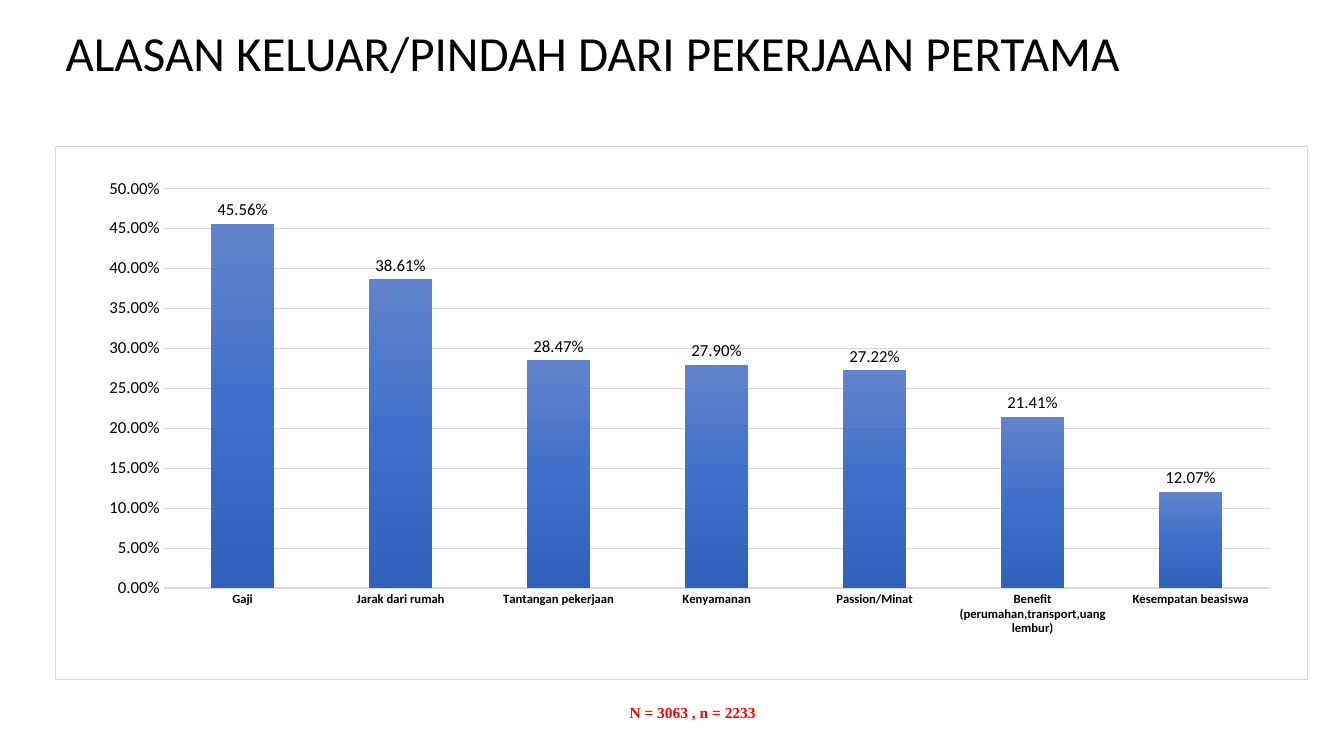
"""Build the slide on reasons for leaving the first job."""
from lxml import etree
from pptx import Presentation
from pptx import util as u
from pptx.chart.data import CategoryChartData
from pptx.dml.color import RGBColor
from pptx.enum import chart as ch, text
from pptx.oxml import parse_xml
from pptx.oxml.ns import nsdecls, qn

WIDE, HIGH = 13.33, 7.5
TITLE = "ALASAN KELUAR/PINDAH DARI PEKERJAAN PERTAMA"
NOTE = "N = 3063 , n = 2233"
REASONS = {
    "Gaji": 0.4556,
    "Jarak dari rumah": 0.3861,
    "Tantangan pekerjaan": 0.2847,
    "Kenyamanan": 0.279,
    "Passion/Minat": 0.2722,
    "Benefit (perumahan,transport,uang lembur)": 0.2141,
    "Kesempatan beasiswa": 0.1207,
}
INK = {"text": "000000", "note": "FF0000", "rule": "D9D9D9"}
STOPS = {0: "6183CB", 50: "3E70CA", 100: "3062BB"}
PLOT = {"x": 0.086, "y": 0.078, "w": 0.884, "h": 0.75}
LEFT, SPAN = 0.55, 12.42
BOXES = {
    "title": (LEFT, 0.1, SPAN, 0.9),
    "chart": (LEFT, 1.45, SPAN, 5.3),
    "note": (6.07, 6.94, 1.6, 0.33),
}
PERCENT = "0.00%"


def place(name):
    return [u.Inches(n) for n in BOXES[name]]


def style(font, size, face="Calibri", ink="text", bold=False):
    font.size, font.name, font.bold = u.Pt(size), face, bold
    font.color.rgb = RGBColor.from_string(INK[ink])


def rule(line, width):
    line.color.rgb = RGBColor.from_string(INK["rule"])
    line.width = u.Pt(width)


def add_title(slide):
    box = slide.shapes.title
    box.left, box.top, box.width, box.height = place("title")
    frame = box.text_frame
    frame.word_wrap = True
    frame.auto_size = text.MSO_AUTO_SIZE.NONE
    frame.vertical_anchor = text.MSO_ANCHOR.MIDDLE
    para = frame.paragraphs[0]
    para.alignment, para.line_spacing = text.PP_ALIGN.LEFT, 0.9
    run = para.add_run()
    run.text = TITLE
    style(run.font, 35)


def shade(fill):
    fill.gradient()
    fill.gradient_angle = 270
    grad = fill.gradient_stops[0]._gs.getparent()
    for stop in list(grad):
        grad.remove(stop)
    for pos, ink in STOPS.items():
        stop = etree.SubElement(grad, qn("a:gs"), pos=str(pos * 1000))
        etree.SubElement(stop, qn("a:srgbClr"), val=ink)


def frame_chart(chart):
    space = chart._chartSpace
    border = parse_xml(
        f'<c:spPr {nsdecls("c", "a")}><a:noFill/><a:ln w="{u.Pt(0.75)}"><a:solidFill>'
        f'<a:srgbClr val="{INK["rule"]}"/></a:solidFill></a:ln></c:spPr>')
    space.find(qn("c:txPr")).addprevious(border)
    plot = space.chart.plotArea
    for old in plot.findall(qn("c:layout")):
        plot.remove(old)
    modes = "".join(f'<c:{k}Mode val="edge"/>' for k in "xy")
    sides = "".join(f'<c:{k} val="{v}"/>' for k, v in PLOT.items())
    plot.insert(0, parse_xml(
        f'<c:layout {nsdecls("c")}><c:manualLayout><c:layoutTarget val="inner"/>'
        f'{modes}{sides}</c:manualLayout></c:layout>'))


def add_chart(slide):
    data = CategoryChartData(number_format=PERCENT)
    data.categories = list(REASONS)
    data.add_series("Series 1", list(REASONS.values()))
    chart = slide.shapes.add_chart(
        ch.XL_CHART_TYPE.COLUMN_CLUSTERED, *place("chart"), data).chart
    chart.has_legend = chart.has_title = False
    style(chart.font, 12)
    frame_chart(chart)

    cats, vals = chart.category_axis, chart.value_axis
    for axis in (cats, vals):
        axis.major_tick_mark = axis.minor_tick_mark = ch.XL_TICK_MARK.NONE
    style(cats.tick_labels.font, 9, bold=True)
    rule(cats.format.line, 1)
    vals.minimum_scale, vals.maximum_scale, vals.major_unit = 0, 0.5, 0.05
    vals.format.line.fill.background()
    rule(vals.major_gridlines.format.line, 0.75)
    vals.tick_labels.number_format = PERCENT
    vals.tick_labels.number_format_is_linked = False

    bars = chart.plots[0]
    bars.gap_width, bars.vary_by_categories = 150, False
    shade(bars.series[0].format.fill)
    bars.has_data_labels = True
    tags = bars.data_labels
    tags.show_value = True
    tags.number_format, tags.number_format_is_linked = PERCENT, False
    tags.position = ch.XL_LABEL_POSITION.OUTSIDE_END
    style(tags.font, 12)


def add_note(slide):
    table = slide.shapes.add_table(1, 1, *place("note")).table
    table.first_row = table.horz_banding = False
    cell = table.cell(0, 0)
    cell.fill.background()
    para = cell.text_frame.paragraphs[0]
    para.alignment = text.PP_ALIGN.CENTER
    run = para.add_run()
    run.text = NOTE
    style(run.font, 11, "Times New Roman", "note", True)


def main():
    deck = Presentation()
    deck.slide_width, deck.slide_height = u.Inches(WIDE), u.Inches(HIGH)
    slide = deck.slides.add_slide(deck.slide_layouts[5])
    add_title(slide)
    add_chart(slide)
    add_note(slide)
    deck.save("out.pptx")


if __name__ == "__main__":
    main()
